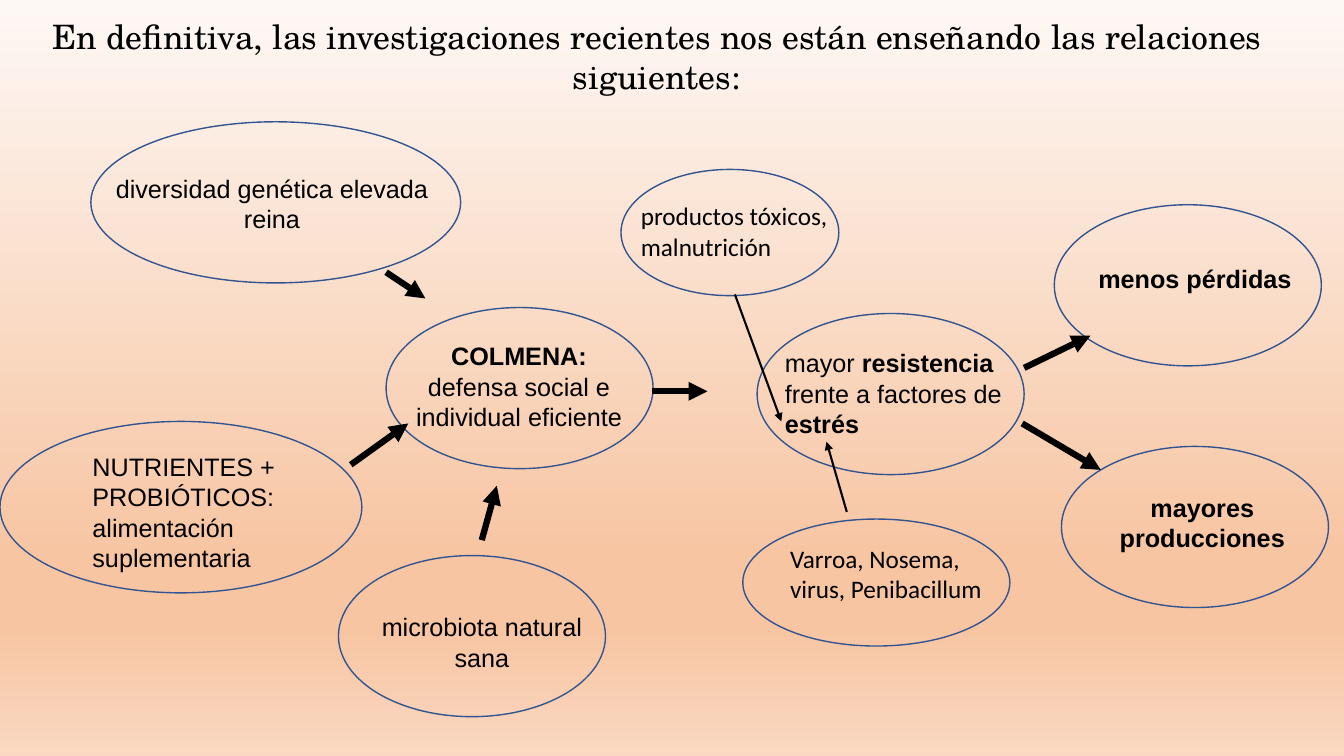
from dataclasses import dataclass

from lxml import etree
from pptx import Presentation
from pptx.dml.color import RGBColor
from pptx.enum.shapes import MSO_CONNECTOR, MSO_SHAPE
from pptx.enum.text import PP_ALIGN
from pptx.oxml.ns import qn
from pptx.util import Cm, Pt

LEFT, CENTER = PP_ALIGN.LEFT, PP_ALIGN.CENTER
ELLIPSE, STRAIGHT = MSO_SHAPE.OVAL, MSO_CONNECTOR.STRAIGHT


@dataclass(frozen=True)
class Theme:
    ink: RGBColor = RGBColor(0x00, 0x00, 0x00)
    outline: RGBColor = RGBColor(0x32, 0x54, 0x91)
    # Position in percent from top to bottom, then colour
    backdrop: tuple = ((0, "FEF8F5"), (74, "F7C5A2"), (83, "F7C5A2"), (100, "FAD8C1"))
    title_font: str = "TeX Gyre Schola"
    body_font: str = "Arial"
    stress_font: str = "Calibri"
    title_size: Pt = Pt(24)
    body_size: Pt = Pt(18)
    outline_width: Pt = Pt(1)
    thin: Pt = Pt(1.5)
    thick: Pt = Pt(4.5)


theme = Theme()


def add_text(shapes, place, paragraphs, align, font, size):
    """Each paragraph is a list of (text, bold) runs."""
    box = shapes.add_textbox(*map(Cm, place))
    frame = box.text_frame
    frame.word_wrap = True
    for index, runs in enumerate(paragraphs):
        para = frame.add_paragraph() if index else frame.paragraphs[0]
        para.alignment = align
        for text, bold in runs:
            span = para.add_run()
            span.text = text
            span.font.name = font
            span.font.size = size
            span.font.bold = bold
            span.font.color.rgb = theme.ink


deck = Presentation()
deck.slide_width, deck.slide_height = Cm(33.87), Cm(19.05)
page = deck.slides.add_slide(deck.slide_layouts[6])

# Background
backdrop = page.background.fill
backdrop.gradient()
backdrop.gradient_angle = 270
stops = page.element.find(".//" + qn("a:gsLst"))
for stop in list(stops):
    stops.remove(stop)
for percent, color in theme.backdrop:
    stop = etree.SubElement(stops, qn("a:gs"), pos=str(percent * 1000))
    etree.SubElement(stop, qn("a:srgbClr"), val=color)

# Title
add_text(
    page.shapes, (0.18, 0.28, 32.74, 2.31),
    [[("En definitiva, las investigaciones recientes nos están enseñando "
       "las relaciones siguientes:", False)]],
    CENTER, theme.title_font, theme.title_size,
)

# Bubbles: ellipse place, text place, alignment, font, paragraphs
bubbles = [
    ((9.73, 7.75, 6.73, 4.06), (9.27, 8.46, 7.62, 2.57), CENTER, theme.body_font,
     [[("COLMENA:", True)], [("defensa social e individual eficiente", False)]]),
    ((2.29, 3.07, 9.32, 4.06), (2.51, 4.24, 8.69, 1.8), CENTER, theme.body_font,
     [[("diversidad genética elevada reina", False)]]),
    ((8.53, 14, 6.73, 4.06), (8.97, 15.29, 6.35, 1.8), CENTER, theme.body_font,
     [[("microbiota natural sana", False)]]),
    ((0, 10.62, 9.12, 4.32), (2.08, 11.25, 7.77, 3.33), LEFT, theme.body_font,
     [[("NUTRIENTES + PROBIÓTICOS: alimentación suplementaria", False)]]),
    ((19.08, 7.9, 6.73, 4.06), (19.53, 8.64, 6.53, 2.57), LEFT, theme.body_font,
     [[("mayor ", False), ("resistencia ", True),
       ("frente a factores de ", False), ("estrés", True)]]),
    ((26.57, 5.16, 6.73, 4.06), (27.43, 6.5, 6.25, 1.02), LEFT, theme.body_font,
     [[("menos pérdidas", True)]]),
    ((26.75, 11.25, 6.73, 4.06), (27.38, 12.27, 5.84, 1.8), CENTER, theme.body_font,
     [[("mayores producciones", True)]]),
    ((15.65, 4.27, 5.49, 3.18), (15.9, 4.93, 5.99, 1.8), LEFT, theme.stress_font,
     [[("productos tóxicos, malnutrición", False)]]),
    ((18.72, 13.08, 6.73, 3.2), (19.66, 13.56, 5.56, 1.42), LEFT, theme.stress_font,
     [[("Varroa, Nosema, virus, Penibacillum", False)]]),
]
for ellipse_place, text_place, align, font, paragraphs in bubbles:
    group = page.shapes.add_group_shape()
    ellipse = group.shapes.add_shape(ELLIPSE, *map(Cm, ellipse_place))
    ellipse.shadow.inherit = False
    ellipse.fill.background()
    ellipse.line.color.rgb = theme.outline
    ellipse.line.width = theme.outline_width
    add_text(group.shapes, text_place, paragraphs, align, font, theme.body_size)

# Arrows: start x, start y, end x, end y, width
arrows = [
    (12.14, 13.61, 12.52, 12.24, theme.thick),  # microbiota to colmena
    (9.73, 6.86, 10.72, 7.52, theme.thick),  # diversidad to colmena
    (16.43, 9.86, 17.83, 9.86, theme.thick),  # colmena to resistencia
    (21.34, 12.9, 20.83, 11.13, theme.thin),  # Varroa to estrés
    (18.52, 7.42, 19.69, 10.62, theme.thin),  # tóxicos to estrés
    (25.81, 9.27, 27.48, 8.46, theme.thick),  # resistencia to pérdidas
    (25.76, 10.67, 27.74, 11.84, theme.thick),  # resistencia to producciones
    (8.84, 11.71, 10.29, 10.67, theme.thick),  # nutrientes to colmena
]
for *ends, width in arrows:
    arrow = page.shapes.add_connector(STRAIGHT, *map(Cm, ends))
    arrow.line.color.rgb = theme.ink
    arrow.line.width = width
    etree.SubElement(arrow.line._get_or_add_ln(), qn("a:tailEnd"), type="triangle")
    etree.SubElement(arrow.element.spPr, qn("a:effectLst"))

deck.save("out.pptx")
